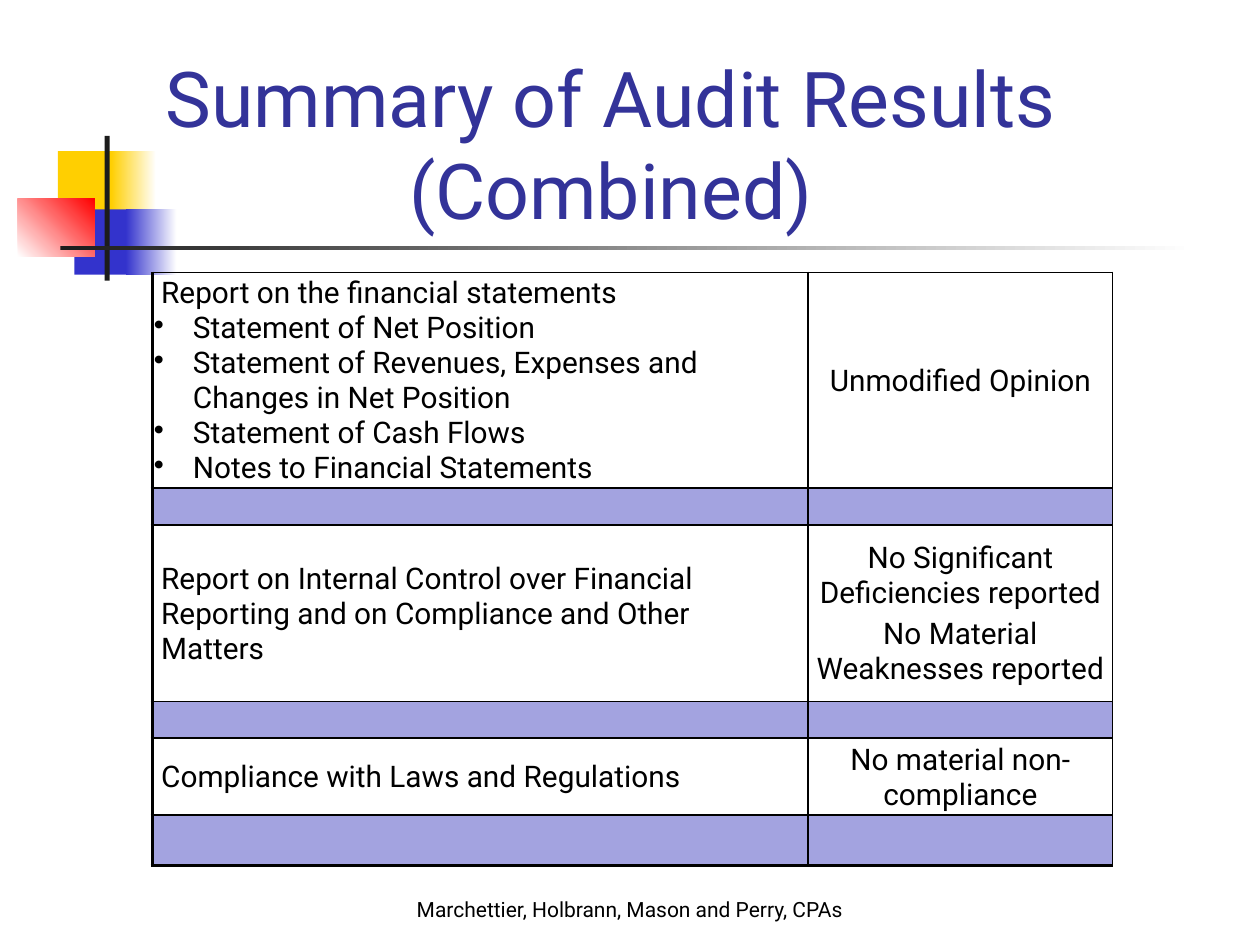
from lxml.etree import SubElement
from pptx import Presentation
from pptx.dml.color import RGBColor
from pptx.enum.shapes import MSO_SHAPE
from pptx.enum.text import MSO_ANCHOR, PP_ALIGN
from pptx.oxml.ns import qn
from pptx.util import Cm, Pt

FONT = "Roboto"
BLACK, WHITE, DARK = "000000", "FFFFFF", "1C1C1C"
YELLOW, BLUE, RED = "FFCF01", "3333CC", "FF0000"
TITLE_COLOR, BAND_COLOR = "333399", "A3A3E0"
LEFT, CENTER = PP_ALIGN.LEFT, PP_ALIGN.CENTER

# left, top, width, height in cm; colours from start to end; gradient angle
ORNAMENTS = [
    ((1.17, 3.05, 1.22, 1.32), [YELLOW], 0),
    ((2.24, 3.05, 0.91, 1.32), [YELLOW, WHITE], 0),
    ((1.5, 4.22, 1.17, 1.32), [BLUE], 0),
    ((2.54, 4.22, 1.02, 1.32), [BLUE, WHITE], 0),
    ((0.36, 4.01, 1.55, 1.17), [WHITE, RED], 45),
    ((2.11, 2.74, 0.1, 2.92), [DARK], 0),
    ((1.22, 4.95, 22.86, 0.09), [DARK, WHITE], 0),
]

COLUMN_WIDTHS = [13.22, 6.14]
# row height in cm, lines of the left cell, lines of the right cell
ROWS = [
    (4.32, [" Report on the financial statements",
            "• Statement of Net Position",
            "• Statement of Revenues, Expenses and Changes in Net Position",
            "• Statement of Cash Flows",
            "• Notes to Financial Statements"],
     ["Unmodified Opinion"]),
    (0.74, [], []),
    (3.56, [" Report on Internal Control over Financial",
            " Reporting and on Compliance and Other",
            " Matters"],
     ["No Significant Deficiencies reported",
      "No Material Weaknesses reported"]),
    (0.74, [], []),
    (1.55, [" Compliance with Laws and Regulations"],
     ["No material non-compliance"]),
    (1.02, [], []),
]


def color(value):
    return RGBColor.from_string(value)


def set_all(target, values):
    for name, value in values.items():
        setattr(target, name, value)


def add_ornament(page, place, colors, angle):
    shape = page.shapes.add_shape(MSO_SHAPE.RECTANGLE, *map(Cm, place))
    shape.shadow.inherit = False
    shape.line.fill.background()
    if len(colors) == 1:
        shape.fill.solid()
        shape.fill.fore_color.rgb = color(colors[0])
        return
    shape.fill.gradient()
    shape.fill.gradient_angle = angle
    for stop, value in zip(shape.fill.gradient_stops, colors):
        stop.color.rgb = color(value)


def write(para, text, size, text_color, align):
    para.alignment = align
    span = para.add_run()
    span.text = text
    set_all(span.font, {"name": FONT, "size": Pt(size)})
    span.font.color.rgb = color(text_color)


def add_text(page, place, text, size, text_color):
    box = page.shapes.add_textbox(*map(Cm, place))
    set_all(box.text_frame, {"word_wrap": True,
                             "vertical_anchor": MSO_ANCHOR.BOTTOM})
    write(box.text_frame.paragraphs[0], text, size, text_color, CENTER)


def add_bullet(para):
    properties = para._p.get_or_add_pPr()
    properties.set("marL", str(Cm(0.79)))
    properties.set("indent", str(-Cm(0.79)))
    SubElement(properties, qn("a:buChar"), char="•")


def add_borders(cell, widths):
    """Draw black borders; widths maps the sides L, R, T, B to points."""
    properties = cell._tc.get_or_add_tcPr()
    for side, width in widths.items():
        line = SubElement(properties, qn(f"a:ln{side}"), w=str(Pt(width)))
        fill = SubElement(line, qn("a:solidFill"))
        SubElement(fill, qn("a:srgbClr"), val=BLACK)


def fill_cell(cell, lines, align):
    set_all(cell, {"vertical_anchor": MSO_ANCHOR.MIDDLE,
                   "margin_left": Cm(0.03), "margin_right": Cm(0.03),
                   "margin_top": Cm(0.03), "margin_bottom": 0})
    frame = cell.text_frame
    if not lines:
        cell.fill.solid()
        cell.fill.fore_color.rgb = color(BAND_COLOR)
        SubElement(frame.paragraphs[0]._p, qn("a:endParaRPr"), sz="1200")
        return
    cell.fill.background()
    for index, line in enumerate(lines):
        para = frame.add_paragraph() if index else frame.paragraphs[0]
        write(para, line.removeprefix("• "), 17, BLACK, align)
        if line.startswith("•"):
            add_bullet(para)
        if align == CENTER and index < len(lines) - 1:
            para.space_after = Pt(3)


def add_results_table(page):
    heights = [row[0] for row in ROWS]
    place = (3.07, 5.49, sum(COLUMN_WIDTHS), sum(heights))
    table = page.shapes.add_table(len(ROWS), len(COLUMN_WIDTHS),
                                  *map(Cm, place)).table
    set_all(table, {"first_row": False, "horz_banding": False})
    for column, width in zip(table.columns, COLUMN_WIDTHS):
        column.width = Cm(width)
    for row_index, (height, *contents) in enumerate(ROWS):
        table.rows[row_index].height = Cm(height)
        bottom = 2.25 if row_index == len(ROWS) - 1 else 1
        for cell, lines, align, left in zip(table.rows[row_index].cells,
                                            contents, (LEFT, CENTER),
                                            (2.25, 1)):
            add_borders(cell, {"L": left, "R": 1, "T": 1, "B": bottom})
            fill_cell(cell, lines, align)


def main():
    deck = Presentation()
    set_all(deck, {"slide_width": Cm(25.4), "slide_height": Cm(19.05)})
    page = deck.slides.add_slide(deck.slide_layouts[6])
    for ornament in ORNAMENTS:
        add_ornament(page, *ornament)
    add_text(page, (1.5, 0.81, 21.64, 4.06),
             "Summary of Audit Results (Combined)", 44, TITLE_COLOR)
    add_results_table(page)
    add_text(page, (7.11, 18.06, 11.18, 0.64),
             "Marchettier, Holbrann, Mason and Perry, CPAs", 12, BLACK)
    deck.save("out.pptx")


if __name__ == "__main__":
    main()
